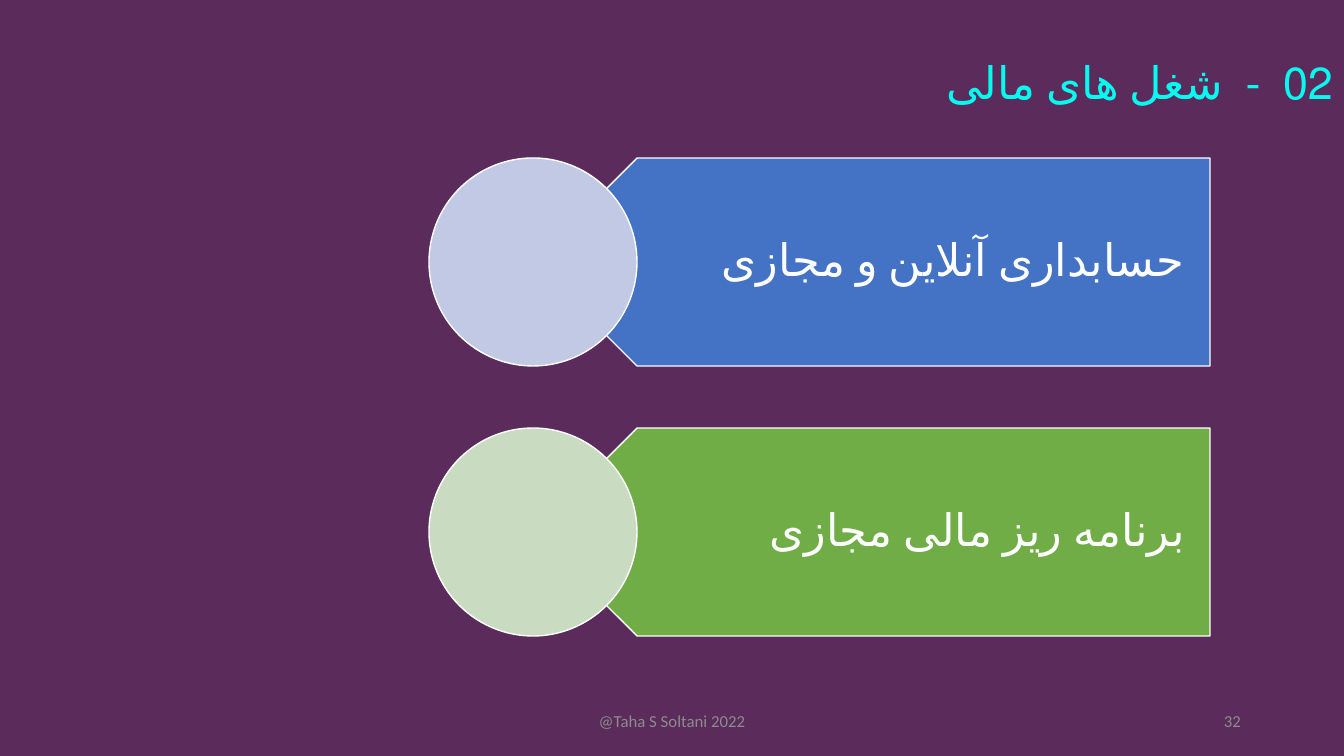
from dataclasses import dataclass

from pptx import Presentation
from pptx.dml.color import RGBColor
from pptx.enum.lang import MSO_LANGUAGE_ID
from pptx.enum.shapes import MSO_SHAPE
from pptx.enum.text import MSO_ANCHOR, MSO_AUTO_SIZE, PP_ALIGN
from pptx.shapes.autoshape import Shape
from pptx.slide import Slide
from pptx.util import Emu, Pt

PX_PER_INCH = 100.8
FONT = "Calibri"
COLORS = {
    "background": "5B2B5C",
    "title": "04FCF0",
    "footer": "8C8C8C",
    "white": "FFFFFF",
    "blue": "4472C4",
    "pale_blue": "C1C9E4",
    "green": "70AD47",
    "pale_green": "C9DBC1",
}

# Job rows, in px
ROW_TOP, ROW_STEP, ROW_HEIGHT = 158, 270, 208
CIRCLE_LEFT, ROW_RIGHT = 429, 1210
ARROW_LEFT = CIRCLE_LEFT + ROW_HEIGHT // 2
LABEL_LEFT = 585


@dataclass(frozen=True)
class Job:
    label: str
    arrow_color: str
    circle_color: str


JOBS = [
    Job("حسابداری آنلاین و مجازی", "blue", "pale_blue"),
    Job("برنامه ریز مالی مجازی", "green", "pale_green"),
]


def px(length: int) -> Emu:
    return Emu(round(length * 914400 / PX_PER_INCH))


def rgb(name: str) -> RGBColor:
    return RGBColor.from_string(COLORS[name])


def write_text(box: Shape, text: str, *, size: int, color: str,
               align: PP_ALIGN = PP_ALIGN.RIGHT,
               anchor: MSO_ANCHOR = MSO_ANCHOR.MIDDLE,
               persian: bool = False) -> None:
    frame = box.text_frame
    frame.word_wrap = True
    frame.auto_size = MSO_AUTO_SIZE.NONE
    frame.vertical_anchor = anchor
    para = frame.paragraphs[0]
    para.alignment = align
    span = para.add_run()
    span.text = text
    span.font.name = FONT
    span.font.size = Pt(size)
    span.font.color.rgb = rgb(color)
    if persian:
        para.line_spacing = 0.9
        para._p.get_or_add_pPr().set("rtl", "1")
        span.font.language_id = MSO_LANGUAGE_ID.FARSI


def add_box(page: Slide, left: int, top: int, width: int, height: int) -> Shape:
    return page.shapes.add_textbox(px(left), px(top), px(width), px(height))


def add_outlined(page: Slide, kind: MSO_SHAPE, left: int, top: int,
                 width: int, color: str) -> Shape:
    shape = page.shapes.add_shape(kind, px(left), px(top), px(width), px(ROW_HEIGHT))
    shape.shadow.inherit = False
    shape.fill.solid()
    shape.fill.fore_color.rgb = rgb(color)
    shape.line.color.rgb = rgb("white")
    shape.line.width = Pt(1)
    return shape


def add_job(page: Slide, job: Job, top: int) -> None:
    arrow = add_outlined(page, MSO_SHAPE.PENTAGON, ARROW_LEFT, top,
                         ROW_RIGHT - ARROW_LEFT, job.arrow_color)
    arrow.rotation = 180
    label = add_box(page, LABEL_LEFT, top, ROW_RIGHT - LABEL_LEFT, ROW_HEIGHT)
    frame = label.text_frame
    frame.margin_left, frame.margin_right = px(92), px(25)
    frame.margin_top = frame.margin_bottom = px(13)
    write_text(label, job.label, size=32, color="white", persian=True)
    add_outlined(page, MSO_SHAPE.OVAL, CIRCLE_LEFT, top, ROW_HEIGHT, job.circle_color)


def main() -> None:
    deck = Presentation()
    deck.slide_width, deck.slide_height = px(1344), px(756)
    page = deck.slides.add_slide(deck.slide_layouts.get_by_name("Title Only"))
    page.background.fill.solid()
    page.background.fill.fore_color.rgb = rgb("background")

    # Title
    title = page.shapes.title
    title.left, title.top, title.width, title.height = px(446), px(56), px(897), px(141)
    write_text(title, "02  -  شغل های مالی", size=32, color="title",
               anchor=MSO_ANCHOR.TOP, persian=True)

    # Jobs
    for index, job in enumerate(JOBS):
        add_job(page, job, ROW_TOP + index * ROW_STEP)

    # Footer and page number
    write_text(add_box(page, 445, 701, 454, 40), "@Taha S Soltani 2022",
               size=12, color="footer", align=PP_ALIGN.CENTER)
    write_text(add_box(page, 949, 701, 302, 40), "32", size=12, color="footer")

    deck.save("out.pptx")


if __name__ == "__main__":
    main()
